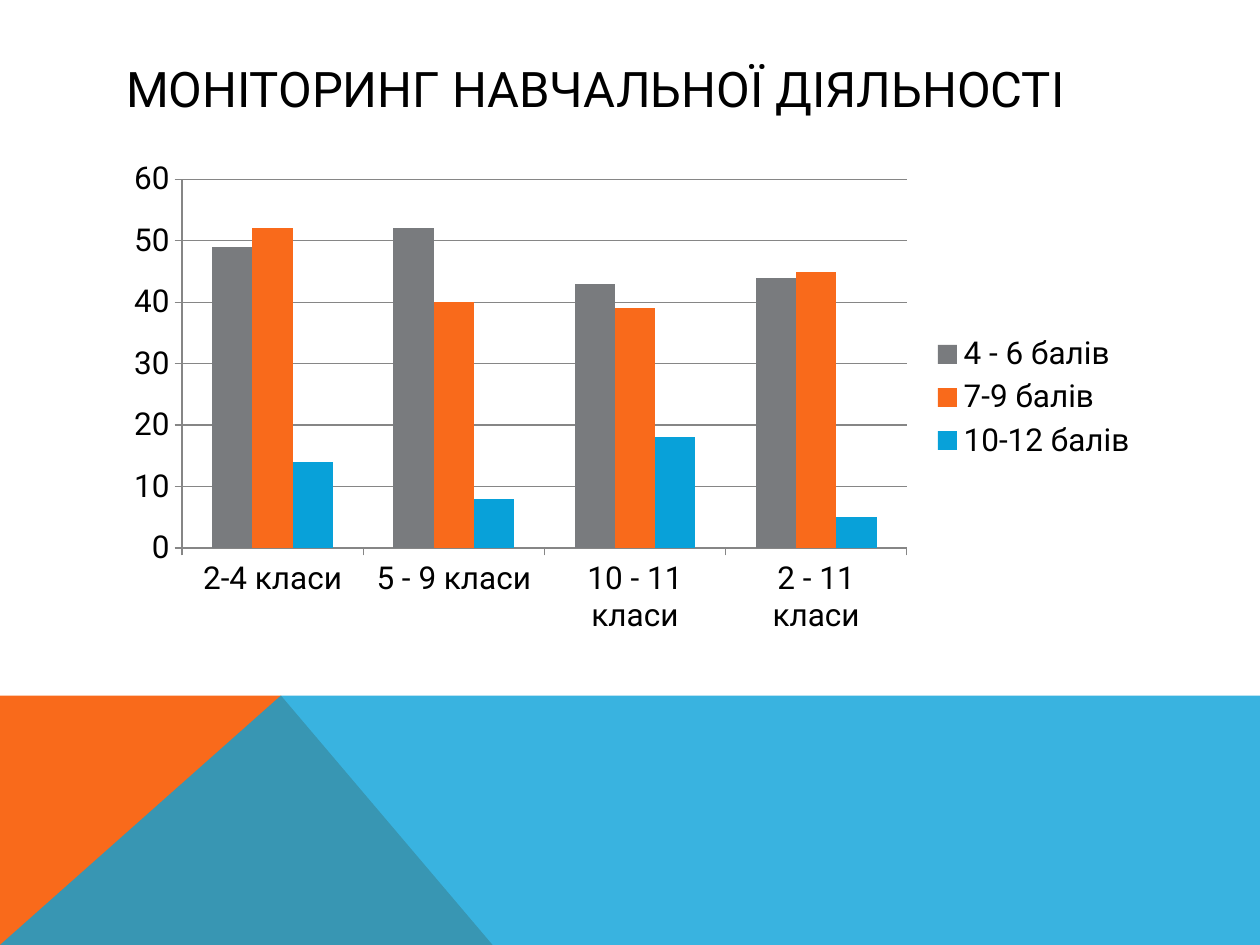
import pptx
import pptx.chart.data
import pptx.dml.color
import pptx.enum.chart
import pptx.enum.text
import pptx.oxml
import pptx.oxml.ns
import pptx.util
from pptx.util import Inches

RGBColor = pptx.dml.color.RGBColor
BLACK = RGBColor(0x00, 0x00, 0x00)
WHITE = RGBColor(0xFF, 0xFF, 0xFF)
GRAY = RGBColor(0x79, 0x7B, 0x7E)
AXIS_GRAY = RGBColor(0x86, 0x86, 0x86)
ORANGE = RGBColor(0xF9, 0x6A, 0x1B)
BLUE = RGBColor(0x08, 0xA1, 0xD9)


class SlideBuilder:
    """Holds the style and the current slide."""

    font_name = "Roboto"
    title_size = pptx.util.Pt(28)
    chart_size = pptx.util.Pt(18)

    def __init__(self, slide):
        self.slide = slide
        slide.background.fill.solid()
        slide.background.fill.fore_color.rgb = WHITE

    def style_font(self, font, size):
        font.name = self.font_name
        font.size = size
        font.bold = False
        font.color.rgb = BLACK

    def title(self, text, left, top, width, height):
        heading = self.slide.shapes.title
        heading.left, heading.top = Inches(left), Inches(top)
        heading.width, heading.height = Inches(width), Inches(height)
        frame = heading.text_frame
        frame.text = text
        frame.vertical_anchor = pptx.enum.text.MSO_ANCHOR.MIDDLE
        frame.auto_size = pptx.enum.text.MSO_AUTO_SIZE.NONE
        paragraph = frame.paragraphs[0]
        paragraph.alignment = pptx.enum.text.PP_ALIGN.LEFT
        self.style_font(paragraph.font, self.title_size)

    def polygon(self, points, color, opacity=100):
        corners = [(Inches(x), Inches(y)) for x, y in points]
        outline = self.slide.shapes.build_freeform(*corners[0])
        outline.add_line_segments(corners[1:], close=True)
        area = outline.convert_to_shape()
        area.shadow.inherit = False
        area.line.fill.background()
        area.fill.solid()
        area.fill.fore_color.rgb = color
        if opacity < 100:
            color_node = area.fill._xPr.find(".//" + pptx.oxml.ns.qn("a:srgbClr"))
            alpha = pptx.oxml.parse_xml(
                f'<a:alpha {pptx.oxml.ns.nsdecls("a")} val="{opacity * 1000}"/>')
            color_node.append(alpha)

    def column_chart(self, categories, series, left, top, width, height):
        scores = pptx.chart.data.CategoryChartData()
        scores.categories = categories
        for name, values, _ in series:
            scores.add_series(name, values)
        chart = self.slide.shapes.add_chart(
            pptx.enum.chart.XL_CHART_TYPE.COLUMN_CLUSTERED,
            Inches(left), Inches(top), Inches(width), Inches(height), scores).chart
        chart.has_title = False
        self.style_font(chart.font, self.chart_size)

        # Columns
        plot = chart.plots[0]
        plot.gap_width = 150
        plot.overlap = 0
        plot.vary_by_categories = False
        for columns, (_, _, color) in zip(plot.series, series):
            columns.format.fill.solid()
            columns.format.fill.fore_color.rgb = color

        # Axes and gridlines
        for axis in (chart.category_axis, chart.value_axis):
            axis.major_tick_mark = pptx.enum.chart.XL_TICK_MARK.OUTSIDE
            axis.minor_tick_mark = pptx.enum.chart.XL_TICK_MARK.NONE
            axis.format.line.color.rgb = AXIS_GRAY
        scale = chart.value_axis
        scale.minimum_scale, scale.maximum_scale, scale.major_unit = 0, 60, 10
        scale.has_major_gridlines = True
        scale.major_gridlines.format.line.color.rgb = AXIS_GRAY

        # Legend
        chart.has_legend = True
        chart.legend.position = pptx.enum.chart.XL_LEGEND_POSITION.RIGHT
        chart.legend.include_in_layout = False


def main():
    presentation = pptx.Presentation()
    presentation.slide_width, presentation.slide_height = Inches(10), Inches(7.5)
    title_only = presentation.slide_layouts[5]
    builder = SlideBuilder(presentation.slides.add_slide(title_only))

    # Coloured band along the bottom
    band_top, peak, bottom = 5.52, 2.23, 7.5
    builder.polygon(
        [(0, bottom), (0, band_top), (peak, band_top), (3.91, bottom)], ORANGE)
    builder.polygon(
        [(0, bottom), (peak, band_top), (10, band_top), (10, bottom)],
        BLUE, opacity=80)

    # Title
    builder.title("МОНІТОРИНГ НАВЧАЛЬНОЇ ДІЯЛЬНОСТІ", 0.9, 0.4, 8.22, 0.6)

    # Scores by group of classes
    builder.column_chart(
        ["2-4 класи", "5 - 9 класи", "10 - 11 класи", "2 - 11 класи"],
        [("4 - 6 балів", (49, 52, 43, 44), GRAY),
         ("7-9 балів", (52, 40, 39, 45), ORANGE),
         ("10-12 балів", (14, 8, 18, 5), BLUE)],
        0.9, 1.2, 8.23, 3.91)

    presentation.save("out.pptx")


if __name__ == "__main__":
    main()
